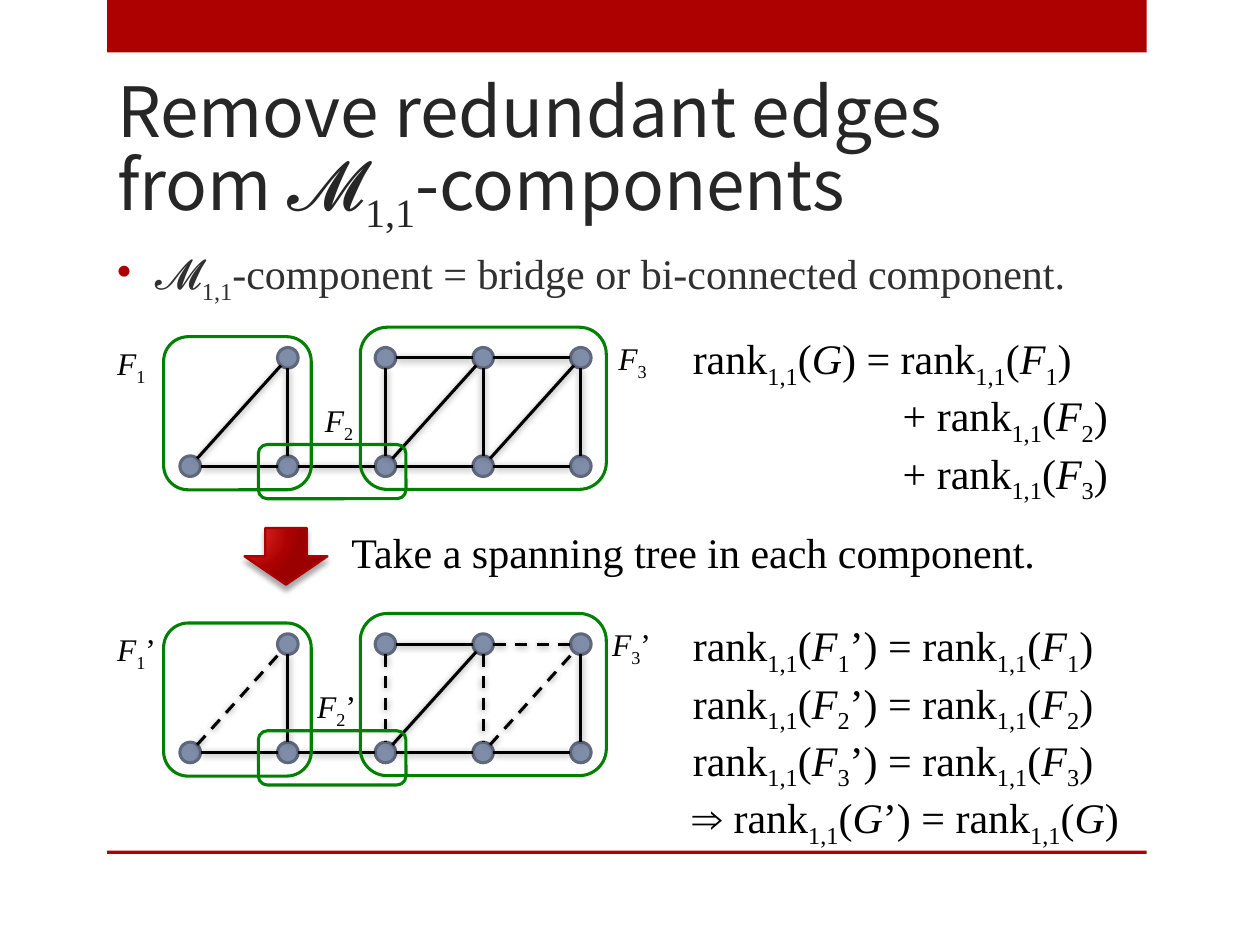
import math
from lxml import etree
from pptx import Presentation
from pptx.dml.color import RGBColor
from pptx.enum.dml import MSO_LINE
from pptx.enum.shapes import MSO_CONNECTOR, MSO_SHAPE
from pptx.enum.text import MSO_ANCHOR
from pptx.oxml import parse_xml
from pptx.oxml.ns import qn
from pptx.util import Pt

RECT, ROUNDED, OVAL = MSO_SHAPE.RECTANGLE, MSO_SHAPE.ROUNDED_RECTANGLE, MSO_SHAPE.OVAL
DOWN_ARROW, STRAIGHT = MSO_SHAPE.DOWN_ARROW, MSO_CONNECTOR.STRAIGHT
DASH, BOTTOM = MSO_LINE.DASH, MSO_ANCHOR.BOTTOM
SANS, SERIF = "Noto Sans CJK JP", "Times New Roman"
RED, BLACK, GREEN = "AD0101", "000000", "008000"

# Content: *...* is italic, ~...~ is subscript, a newline is a line break
TITLE = "Remove redundant edges\nfrom 𝓜~1,1~-components"
DEFINITION = "𝓜~1,1~-component = bridge or bi-connected component."
STEP = "Take a spanning tree in each component."
RANK_SUM = ["rank~1,1~(*G*) = rank~1,1~(*F*~1~)",
            "+ rank~1,1~(*F*~2~)",
            "+ rank~1,1~(*F*~3~)"]
RANK_KEPT = [f"rank~1,1~(*F*~{i}~’) = rank~1,1~(*F*~{i}~)" for i in (1, 2, 3)]
RANK_KEPT.append("⇒ rank~1,1~(*G*’) = rank~1,1~(*G*)")

# Graph on a grid of (column, row); row 0 is the upper one
NODES = [(0, 1)] + [(col, row) for col in (1, 2, 3, 4) for row in (0, 1)]
TREE_EDGES = [((0, 1), (1, 1)), ((1, 0), (1, 1)), ((1, 1), (2, 1)),
              ((2, 0), (3, 0)), ((2, 1), (3, 1)), ((2, 1), (3, 0)),
              ((3, 1), (4, 1)), ((4, 0), (4, 1))]
REDUNDANT_EDGES = [((0, 1), (1, 0)), ((2, 0), (2, 1)), ((3, 0), (3, 1)),
                   ((3, 0), (4, 0)), ((3, 1), (4, 0))]
COMPONENT_FRAMES = [(205.9, 187, 140.6, 92.7), (93.5, 192.4, 84.4, 87.5),
                    (147.6, 254, 84.4, 31)]
# (prime mark, redundant edges dashed, drop, label places)
GRAPHS = [("", False, 0, [(59.8, 193), (178.6, 225.4), (346.3, 190)]),
          ("’", True, 163.6, [(59.8, 193), (174.2, 225.4), (342.7, 190)])]
GRID_LEFT, GRID_TOP, COLUMN_STEP, ROW_STEP, RADIUS = 108.7, 204.5, 55.8, 61.9, 5.9

prs = Presentation()
prs.slide_width, prs.slide_height = Pt(720), Pt(540)
slide = prs.slides.add_slide(prs.slide_layouts[6])


def color(hex_code):
    return RGBColor.from_string(hex_code)


def add_shape(kind, box, fill=None, line=None, width=1.75):
    shape = slide.shapes.add_shape(kind, *map(Pt, box))
    shape.shadow.inherit = False
    if fill:
        shape.fill.solid()
        shape.fill.fore_color.rgb = color(fill)
    else:
        shape.fill.background()
    if line:
        shape.line.color.rgb = color(line)
        shape.line.width = Pt(width)
    else:
        shape.line.fill.background()
    return shape


def cast_shadow(shape, opacity, blur, distance, angle):
    properties = shape._element.spPr
    effects = properties.find(qn("a:effectLst"))
    if effects is None:
        effects = etree.SubElement(properties, qn("a:effectLst"))
    shadow = etree.SubElement(effects, qn("a:outerShdw"), blurRad=str(Pt(blur)),
                              dist=str(Pt(distance)), dir=str(angle * 60000),
                              rotWithShape="0")
    tint = etree.SubElement(shadow, qn("a:srgbClr"), val=BLACK)
    etree.SubElement(tint, qn("a:alpha"), val=str(opacity * 1000))


def add_runs(paragraph, marked):
    italic = subscript = False
    text = ""
    for char in marked + "\0":
        if char not in "*~\n\0":
            text += char
            continue
        if text:
            run = paragraph.add_run()
            run.text = text
            if italic:
                run.font.italic = True
            if subscript:
                run.font._element.set("baseline", "-25000")
            text = ""
        if char == "\n":
            paragraph.add_line_break()
        italic ^= char == "*"
        subscript ^= char == "~"


def add_text(box, lines, size=24, font=SERIF, ink=BLACK):
    frame = slide.shapes.add_textbox(*map(Pt, box)).text_frame
    frame.word_wrap = True
    for i, line in enumerate(lines):
        paragraph = frame.add_paragraph() if i else frame.paragraphs[0]
        paragraph.font.size, paragraph.font.name = Pt(size), font
        paragraph.font.color.rgb = color(ink)
        add_runs(paragraph, line)
    return frame


def center(node):
    col, row = node
    return GRID_LEFT + col * COLUMN_STEP, GRID_TOP + row * ROW_STEP


def add_edge(start, end, drop, dashed):
    (x1, y1), (x2, y2) = center(start), center(end)
    length = math.hypot(x2 - x1, y2 - y1)
    dx, dy = (x2 - x1) * RADIUS / length, (y2 - y1) * RADIUS / length
    edge = slide.shapes.add_connector(STRAIGHT, Pt(x1 + dx), Pt(y1 + dy + drop),
                                      Pt(x2 - dx), Pt(y2 - dy + drop))
    edge.line.color.rgb = color(BLACK)
    edge.line.width = Pt(1.75)
    if dashed:
        edge.line.dash_style = DASH
    cast_shadow(edge, 40, 4, 1, 88)


# Bands at top and bottom
add_shape(RECT, (61.2, 0, 594, 30), RED)
add_shape(RECT, (61.2, 486, 594, 2), RED)

# Title and definition
title = add_text((59.8, 54, 594, 84.2), [TITLE], 39.6, SANS, "262626")
title.vertical_anchor = BOTTOM
title.paragraphs[0].line_spacing = Pt(48)
for run in title.paragraphs[0].runs:
    if run.text == "1,1":
        run.font.name = SERIF

definition = add_text((59.8, 138.2, 594, 347.8), [DEFINITION], ink="303030").paragraphs[0]
definition.space_before = Pt(4.8)
bullet = definition._p.get_or_add_pPr()
bullet.set("marL", str(Pt(21.6)))
bullet.set("indent", str(Pt(-21.6)))
bullet_color = etree.Element(qn("a:buClr"))
etree.SubElement(bullet_color, qn("a:srgbClr"), val=RED)
bullet_char = etree.Element(qn("a:buChar"), char="•")
defaults = bullet.find(qn("a:defRPr"))
defaults.addprevious(bullet_color)
defaults.addprevious(bullet_char)

# Rank equations
rank_sum = add_text((388.8, 186.5, 258, 94.3), RANK_SUM)
for addend in rank_sum.paragraphs[1:]:
    addend._p.get_or_add_pPr().set("marL", str(Pt(120)))
add_text((388.8, 350.6, 282.2, 123.8), RANK_KEPT)

# Graphs before and after
for prime, dashed, drop, label_places in GRAPHS:
    for x, y in map(center, NODES):
        add_shape(OVAL, (x - RADIUS, y - RADIUS + drop, 2 * RADIUS, 2 * RADIUS),
                  "808DA9", "5F687D")
    for start, end in TREE_EDGES:
        add_edge(start, end, drop, False)
    for start, end in REDUNDANT_EDGES:
        add_edge(start, end, drop, dashed)
    for left, top, width, height in COMPONENT_FRAMES:
        add_shape(ROUNDED, (left, top + drop, width, height), line=GREEN)
    for number, (left, top) in enumerate(label_places, 1):
        add_text((left, top + drop, 40.3, 28.8), [f"*F*~{number}~{prime}"], 18)

# Step between the graphs
arrow = add_shape(DOWN_ARROW, (139.7, 301.7, 47.5, 32.4), RED, RED, 1.25)
stops = "".join(f'<a:gs pos="{pos * 1000}"><a:srgbClr val="{tone}"/></a:gs>'
                for pos, tone in ((0, "E62F2F"), (76, RED), (100, "9C0101")))
gradient = parse_xml(
    '<a:gradFill xmlns:a="http://schemas.openxmlformats.org/drawingml/2006/main">'
    f'<a:gsLst>{stops}</a:gsLst><a:path path="circle">'
    '<a:fillToRect l="15000" t="15000" r="100000" b="100000"/></a:path></a:gradFill>')
arrow_properties = arrow._element.spPr
arrow_properties.replace(arrow_properties.find(qn("a:solidFill")), gradient)
cast_shadow(arrow, 35, 3, 3, 90)
add_text((193.7, 297.4, 418.3, 36), [STEP])

prs.save("out.pptx")
